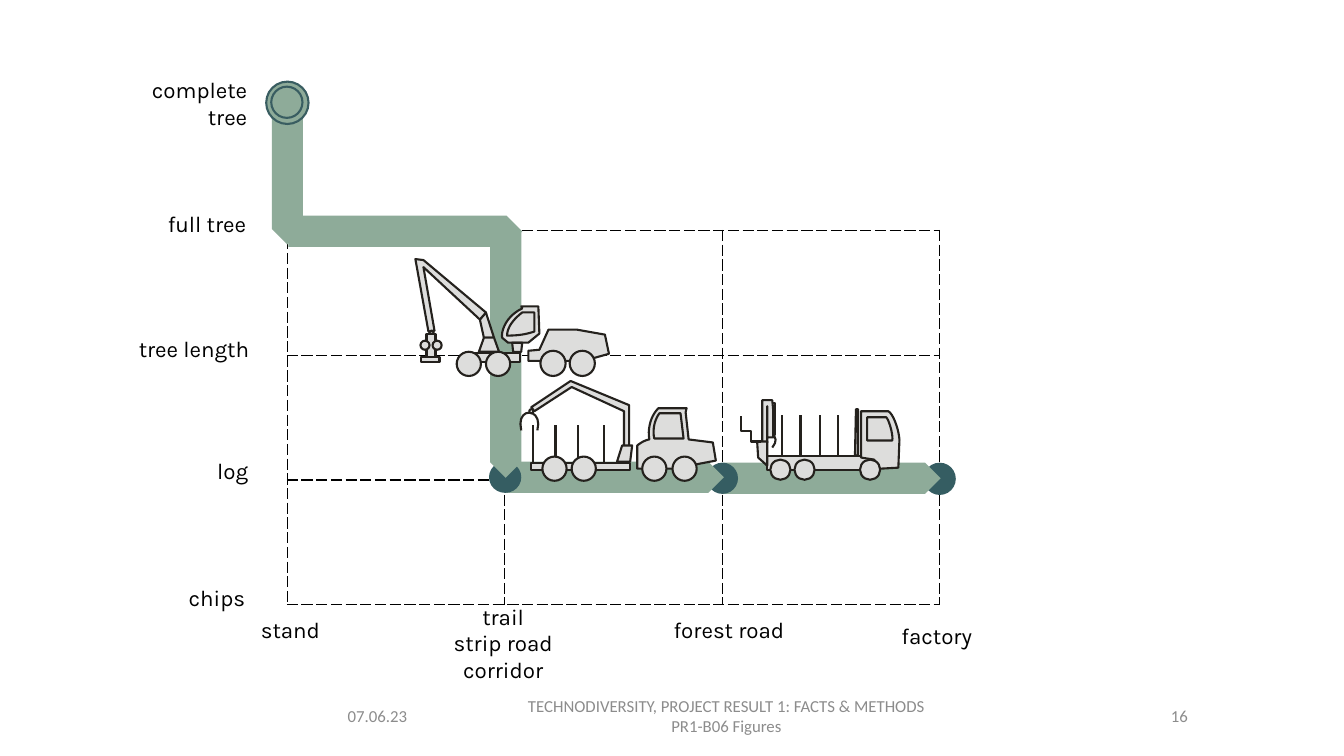
import pptx
import pptx.util
import pptx.dml.color
import pptx.enum.shapes
import pptx.enum.text
import pptx.oxml
import pptx.oxml.ns
from pptx.util import Inches

MSO = pptx.enum.shapes.MSO_SHAPE
ALIGN = pptx.enum.text.PP_ALIGN
GREEN, TEAL, RING, GREY, INK = "8EAB99", "355D62", "395D61", "DDDDDC", "24211D"
BLACK, FOOT = "000000", "8C8C8C"
KINDS = {"oval": MSO.OVAL, "rect": MSO.RECTANGLE, "arrow": MSO.PENTAGON}

GRID = dict(left=2.85, top=1.05, width=6.47, height=4.95, rows=4, cols=3)

ROUTE = [
    ("oval", 9.16, 4.59, 0.32, 0.32, 0),
    ("arrow", 7.17, 4.59, 2.16, 0.31, 0),
    ("oval", 7.01, 4.59, 0.31, 0.31, 0),
    ("arrow", 5.02, 4.58, 2.16, 0.31, 0),
    ("oval", 4.85, 4.58, 0.32, 0.31, 0),
    ("arrow", 3.79, 3.36, 2.45, 0.31, 90),
    ("arrow", 2.86, 2.14, 2.32, 0.31, 0),
    ("arrow", 2.18, 1.6, 1.34, 0.31, 90),
]
START = [("oval", 2.64, 0.81, 0.42, 0.42), ("oval", 2.69, 0.86, 0.31, 0.31)]

HARVESTER = [
    ("rect", 4.7, 3.5, 0.46, 0.09),
    *[("oval", x, 3.49, 0.24, 0.24) for x in (4.53, 4.82)],
    ("free", (5.24, 3.48), (5.24, 3.58), (5.79, 3.58), (6.04, 3.51), (6, 3.32),
     (5.72, 3.27), (5.44, 3.27), (5.35, 3.47)),
    ("free", (5.18, 3.06), (5.17, 3.04), (5.34, 3.04), (5.35, 3.31), (5.24, 3.4),
     (5.04, 3.4), (4.98, 3.35), (4.97, 3.27, 5.03, 3.13, 5.18, 3.06)),
    ("free", (5.18, 3.1), (5.09, 3.17, 5.03, 3.25, 5.03, 3.33),
     (5.13, 3.33, 5.21, 3.32, 5.3, 3.29), (5.3, 3.1), (5.26, 3.1, 5.22, 3.1, 5.18, 3.1)),
    ("free", (4.76, 3.17), (4.8, 3.35), (4.9, 3.35), (4.82, 3.1)),
    ("free", (4.95, 3.49), (4.9, 3.35), (4.8, 3.35), (4.75, 3.49)),
    ("free", (5.08, 3.4), (5.18, 3.4), (5.17, 3.49), (5.09, 3.49)),
    ("free", (4.82, 3.1), (4.2, 2.58), (4.12, 2.57), (4.25, 3.29), (4.31, 3.28),
     (4.2, 2.65), (4.76, 3.17)),
    *[("oval", x, 3.48, 0.25, 0.25) for x in (5.65, 5.36)],
    ("rect", 4.23, 3.31, 0.09, 0.23),
    *[("oval", x, 3.38, 0.09, 0.09) for x in (4.17, 4.29)],
    ("rect", 4.18, 3.54, 0.18, 0.05),
    ("open", (4.28, 3.28), (4.3, 3.29), (4.3, 3.31), (4.26, 3.31), (4.26, 3.29), (4.28, 3.28)),
]
FORWARDER = [
    *[("line", x, 4.22, x, 4.58) for x in (5.29, 5.51, 5.73, 5.99)],
    ("rect", 5.27, 4.59, 0.98, 0.07),
    ("free", (6.68, 4.65), (7.1, 4.57), (7.07, 4.39), (6.83, 4.36), (6.8, 4.09), (6.81, 4.05),
     (6.53, 4.05), (6.46, 4.12, 6.42, 4.24, 6.44, 4.36), (6.39, 4.37, 6.36, 4.39, 6.32, 4.42),
     (6.32, 4.65)),
    ("free", (6.24, 4.48), (6.24, 4.02), (5.66, 3.78), (5.27, 4.04), (5.3, 4.08),
     (5.67, 3.84), (6.19, 4.08), (6.19, 4.48)),
    ("free", (6.17, 4.42), (6.12, 4.58), (6.25, 4.58), (6.27, 4.42)),
    *[("oval", x, 4.53, 0.24, 0.24) for x in (5.38, 5.67, 6.37, 6.67)],
    ("open", (5.17, 4.27), (5.11, 4.03, 5.39, 4.04, 5.33, 4.27)),
    ("free", (6.75, 4.1), (6.78, 4.35), (6.49, 4.35), (6.47, 4.27, 6.49, 4.17, 6.54, 4.1)),
    ("oval", 5.25, 4.06, 0.04, 0.04),
]
TRUCK = [
    ("rect", 7.56, 4, 0.13, 0.32),
    ("open", (7.6, 4.44), (7.48, 4.24, 7.79, 4.28, 7.66, 4.44)),
    ("free", (7.56, 4.39), (7.56, 3.97), (7.66, 3.97), (7.67, 4.08), (7.67, 4.34),
     (7.61, 4.34), (7.61, 4.03), (7.61, 4.39)),
    ("free", (8.48, 4.52), (8.49, 4.06), (8.51, 4.06), (8.51, 4.52)),
    ("rect", 7.61, 4.52, 1.07, 0.14),
    ("free", (8.81, 4.08), (8.54, 4.08), (8.54, 4.54), (8.67, 4.56), (8.73, 4.65),
     (8.91, 4.64), (8.92, 4.39), (8.93, 4.32, 8.87, 4.11, 8.81, 4.08)),
    ("free", (8.79, 4.14), (8.6, 4.14), (8.6, 4.37), (8.85, 4.37),
     (8.86, 4.32, 8.82, 4.17, 8.79, 4.14)),
    *[("oval", x, 4.56, 0.2, 0.2) for x in (7.64, 8.53, 7.88)],
    *[("line", x, 4.12, x, 4.52) for x in (7.76, 7.94, 8.13, 8.31)],
    ("free", (7.61, 4.38), (7.61, 4.62), (7.52, 4.54), (7.51, 4.38)),
    ("open", (7.35, 4.13), (7.35, 4.28), (7.45, 4.28), (7.45, 4.38), (7.55, 4.38)),
]

PLACES = [
    ("stand", 2.02, 6.06, 0.37), ("trail\nstrip road\ncorridor", 4.13, 5.93, 0.91),
    ("forest road", 6.37, 6.06, 0.37), ("factory", 8.43, 6.12, 0.37),
]
STATES = [
    ("complete tree", 1.3, 0.71, 1.25, 0.64), ("full tree", 0.99, 2.04, 1.55, 0.37),
    ("tree length", 1.09, 3.28, 1.48, 0.37), ("log", 1.41, 4.49, 1.15, 0.37),
    ("chips", 1.38, 5.75, 1.15, 0.37),
]
FOOTERS = [
    ("07.06.23", 3.35, 1.34, ALIGN.LEFT),
    ("TECHNODIVERSITY, PROJECT RESULT 1: FACTS & METHODS\nPR1-B06 Figures", 4.86, 4.69, ALIGN.CENTER),
    ("16", 9.77, 2.11, ALIGN.RIGHT),
]


def rgb(value):
    return pptx.dml.color.RGBColor.from_string(value)


def add_text(s, text, box, align, size=16, font="Karla", color=BLACK, anchor="TOP"):
    tf = s.shapes.add_textbox(*map(Inches, box)).text_frame
    tf.word_wrap = True
    tf.vertical_anchor = getattr(pptx.enum.text.MSO_ANCHOR, anchor)
    for i, line in enumerate(text.split("\n")):
        p = tf.paragraphs[0] if i == 0 else tf.add_paragraph()
        p.alignment = align
        r = p.add_run()
        r.text = line
        r.font.size, r.font.name = pptx.util.Pt(size), font
        r.font.color.rgb = rgb(color)


def paint(sp, fill, line):
    sp.shadow.inherit = False
    if fill:
        sp.fill.solid()
        sp.fill.fore_color.rgb = rgb(fill)
    else:
        sp.fill.background()
    if line:
        sp.line.color.rgb = rgb(line)
        sp.line.width = pptx.util.Pt(1.5)
    else:
        sp.line.fill.background()


def flatten(points, steps=10):
    flat = [points[0]]
    for point in points[1:]:
        if len(point) == 2:
            flat.append(point)
            continue
        a, b, c, d = flat[-1], point[:2], point[2:4], point[4:]
        for i in range(1, steps + 1):
            t = i / steps
            u = 1 - t
            flat.append(tuple(u**3 * a[k] + 3 * u * u * t * b[k] + 3 * u * t * t * c[k] + t**3 * d[k]
                              for k in (0, 1)))
    return [(Inches(x), Inches(y)) for x, y in flat]


def draw(shapes, kind, *geometry, fill=GREY, line=INK):
    if kind == "line":
        sp = shapes.add_connector(pptx.enum.shapes.MSO_CONNECTOR.STRAIGHT, *map(Inches, geometry))
        sp.line.color.rgb = rgb(line)
        sp.line.width = pptx.util.Pt(1.5)
        pptx.oxml.ns.qn("a:effectLst")
        sp._element.spPr.append(pptx.oxml.parse_xml(
            f'<a:effectLst {pptx.oxml.ns.nsdecls("a")}/>'))
        return sp
    if kind in KINDS:
        sp = shapes.add_shape(KINDS[kind], *map(Inches, geometry))
    else:
        points = flatten(geometry)
        fb = shapes.build_freeform(*points[0])
        fb.add_line_segments(points[1:], close=kind == "free")
        sp = fb.convert_to_shape()
    paint(sp, None if kind == "open" else fill, line)
    return sp


def add_grid(s, left, top, width, height, rows, cols):
    tbl = s.shapes.add_table(rows, cols, *map(Inches, (left, top, width, height))).table
    tbl.first_row = tbl.horz_banding = False
    for row in tbl.rows:
        row.height = Inches(height / rows)
    for i in range(rows):
        for j in range(cols):
            cell = tbl.cell(i, j)
            tcPr = cell._tc.get_or_add_tcPr()
            for side in "LRTB":
                shown = i > 0 or side == "B" or (side == "L" and j == 0)
                style = (f'<a:solidFill><a:srgbClr val="{BLACK}"/></a:solidFill><a:prstDash val="dash"/>'
                         if shown else "<a:noFill/>")
                tcPr.append(pptx.oxml.parse_xml(
                    f'<a:ln{side} {pptx.oxml.ns.nsdecls("a")} w="12700">{style}</a:ln{side}>'))
            cell.fill.background()


def main():
    prs = pptx.Presentation()
    prs.slide_width, prs.slide_height = Inches(13.33), Inches(7.5)
    s = prs.slides.add_slide(prs.slide_layouts[6])
    for text, left, width, align in FOOTERS:
        add_text(s, text, (left, 6.9, width, 0.4), align, size=12, font="Calibri",
                 color=FOOT, anchor="MIDDLE")
    add_grid(s, **GRID)
    for kind, *box, turn in ROUTE:
        sp = draw(s.shapes, kind, *box, fill=TEAL if kind == "oval" else GREEN, line=None)
        sp.rotation = turn
    for parts, fill, line in ((START, GREEN, RING), (HARVESTER, GREY, INK),
                              (FORWARDER, GREY, INK), (TRUCK, GREY, INK)):
        group = s.shapes.add_group_shape()
        for part in parts:
            draw(group.shapes, *part, fill=fill, line=line)
    for text, left, top, height in PLACES:
        add_text(s, text, (left, top, 1.72, height), ALIGN.CENTER)
    for text, *box in STATES:
        add_text(s, text, box, ALIGN.RIGHT)
    prs.save("out.pptx")


if __name__ == "__main__":
    main()
